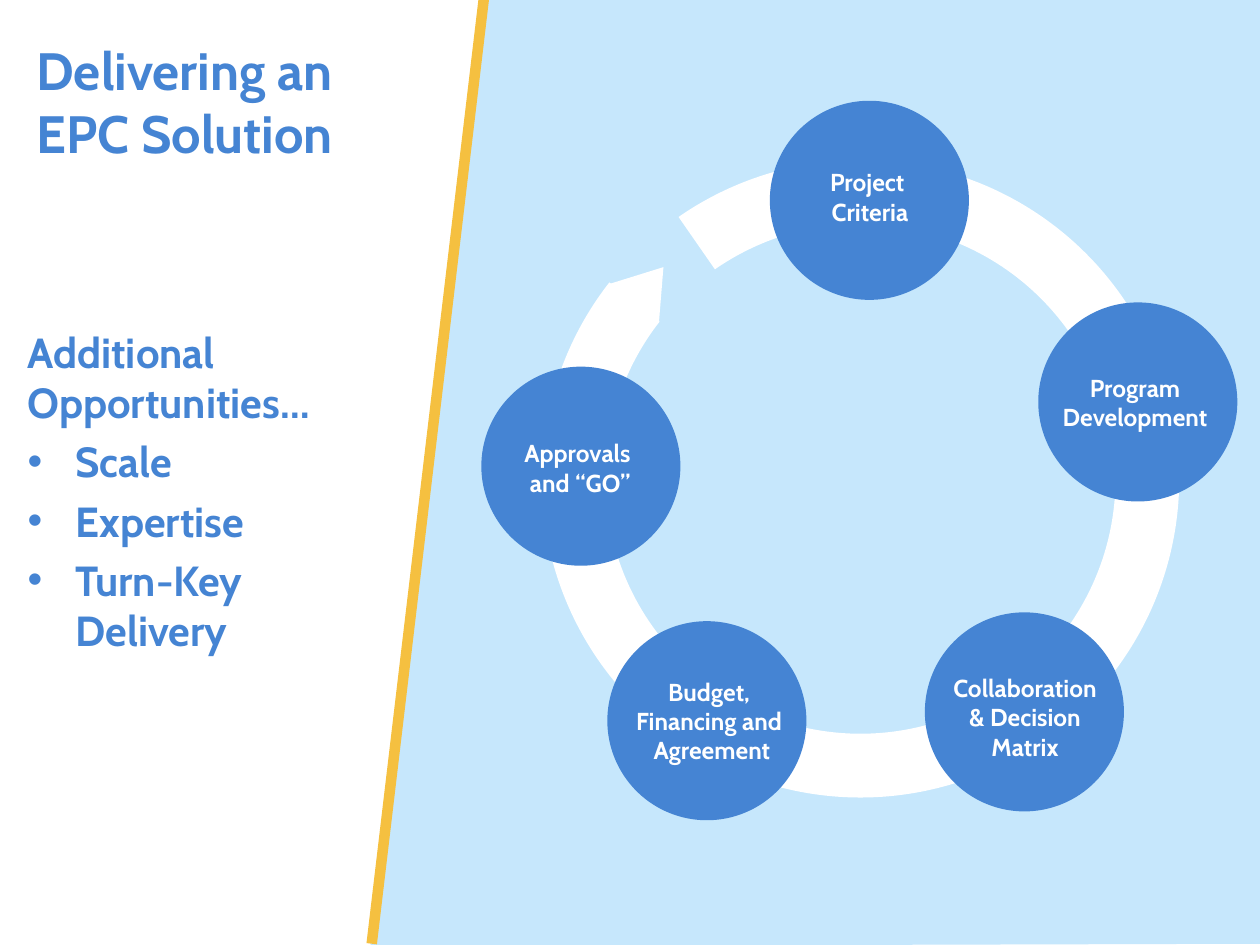
from lxml import etree
from pptx import Presentation
from pptx.dml.color import RGBColor
from pptx.enum.shapes import MSO_CONNECTOR, MSO_SHAPE
from pptx.enum.text import MSO_ANCHOR, MSO_AUTO_SIZE, PP_ALIGN
from pptx.oxml.ns import qn
from pptx.util import Inches, Pt

LINE = MSO_CONNECTOR.STRAIGHT
ARC, DISC, TIP = MSO_SHAPE.BLOCK_ARC, MSO_SHAPE.OVAL, MSO_SHAPE.ISOSCELES_TRIANGLE
TOP, FIXED = MSO_ANCHOR.TOP, MSO_AUTO_SIZE.NONE
LEFT, CENTER = PP_ALIGN.LEFT, PP_ALIGN.CENTER

FONT = "Cabin"
COLORS = {"blue": "4584D3", "sky": "C6E7FC", "gold": "F5C040", "white": "FFFFFF"}
DISC_SIZE = 1.58
INDENT = 0.38

# Disc corner, label box, label lines
STEPS = [
    ((6.11, 0.8), (6.48, 1.28, 0.85, 0.57), ["Project ", "Criteria"]),
    ((8.24, 2.4), (8.27, 2.91, 1.52, 0.63), ["Program ", "Development "]),
    ((7.34, 4.86), (7.39, 5.29, 1.49, 0.89),
     ["Collaboration", "& Decision", "Matrix"]),
    ((4.82, 4.93), (4.87, 5.32, 1.56, 0.89),
     ["Budget, ", "Financing and ", "Agreement"]),
    ((3.82, 2.91), (4, 3.43, 1.21, 0.63), ["Approvals ", "and “GO”"]),
]


def color(name):
    return RGBColor.from_string(COLORS[name])


def paint(shape, name):
    shape.shadow.inherit = False
    shape.fill.solid()
    shape.fill.fore_color.rgb = color(name)
    shape.line.fill.background()


def style(para, size, name, align):
    para.alignment = align
    font = para.font
    font.name, font.size, font.bold = FONT, Pt(size), True
    font.color.rgb = color(name)


def add_shape(slide, kind, box, name):
    shape = slide.shapes.add_shape(kind, *map(Inches, box))
    paint(shape, name)
    return shape


def add_panel(slide):
    """Sky area with a slanted gold edge."""
    edge = [(3.87, -0.01), (10.01, -0.01), (10.01, 7.49), (2.94, 7.51)]
    points = [(Inches(x), Inches(y)) for x, y in edge]
    build = slide.shapes.build_freeform(*points[0])
    build.add_line_segments(points[1:], close=True)
    paint(build.convert_to_shape(), "sky")

    ends = map(Inches, (2.95, 7.49, 3.84, -0.01))
    rule = slide.shapes.add_connector(LINE, *ends)
    rule.line.color.rgb = color("gold")
    rule.line.width = Pt(6)
    etree.SubElement(rule._element.spPr, qn("a:effectLst"))


def fill_holder(holder, box, lines, size):
    """Place a placeholder and fill it with left-aligned blue lines."""
    holder.left, holder.top, holder.width, holder.height = map(Inches, box)
    frame = holder.text_frame
    frame.text = "\n".join(lines)
    frame.vertical_anchor, frame.auto_size = TOP, FIXED
    for i, para in enumerate(frame.paragraphs):
        para.space_before = Pt(5 if i else 0)
        style(para, size, "blue", LEFT)
    return frame


def add_list(holder):
    lines = ["Additional Opportunities…", "Scale", "Expertise", "Turn-Key Delivery"]
    frame = fill_holder(holder, (0.12, 2.54, 2.93, 2.81), lines, 24)
    for i, para in enumerate(frame.paragraphs):
        props = para._p.get_or_add_pPr()
        indent = Inches(INDENT) if i else 0
        props.set("marL", str(indent))
        props.set("indent", str(-indent))
        if not i:
            props.insert_element_before(
                etree.Element(qn("a:buNone")), "a:tabLst", "a:defRPr", "a:extLst")


def add_label(slide, box, lines):
    frame = slide.shapes.add_textbox(*map(Inches, box)).text_frame
    frame.word_wrap = False
    frame.text = "\n".join(lines)
    for para in frame.paragraphs:
        style(para, 14, "white", CENTER)


def add_cycle(slide):
    ring = add_shape(slide, ARC, (4.3, 1.27, 5.06, 5.06), "white")
    for i, value in enumerate((141.12, 130.81, 0.1)):
        ring.adjustments[i] = value
    for corner, _, _ in STEPS:
        add_shape(slide, DISC, (*corner, DISC_SIZE, DISC_SIZE), "blue")
    add_shape(slide, TIP, (4.9, 2.08, 0.5, 0.37), "white").rotation = 38.7
    for _, box, lines in STEPS:
        add_label(slide, box, lines)


def main():
    deck = Presentation()
    deck.slide_width, deck.slide_height = Inches(10), Inches(7.5)
    slide = deck.slides.add_slide(deck.slide_layouts[1])
    add_panel(slide)
    fill_holder(slide.shapes.title, (0.19, 0.25, 2.75, 0.94),
                ["Delivering an EPC Solution"], 30)
    add_list(slide.placeholders[1])
    add_cycle(slide)
    deck.save("out.pptx")


if __name__ == "__main__":
    main()
